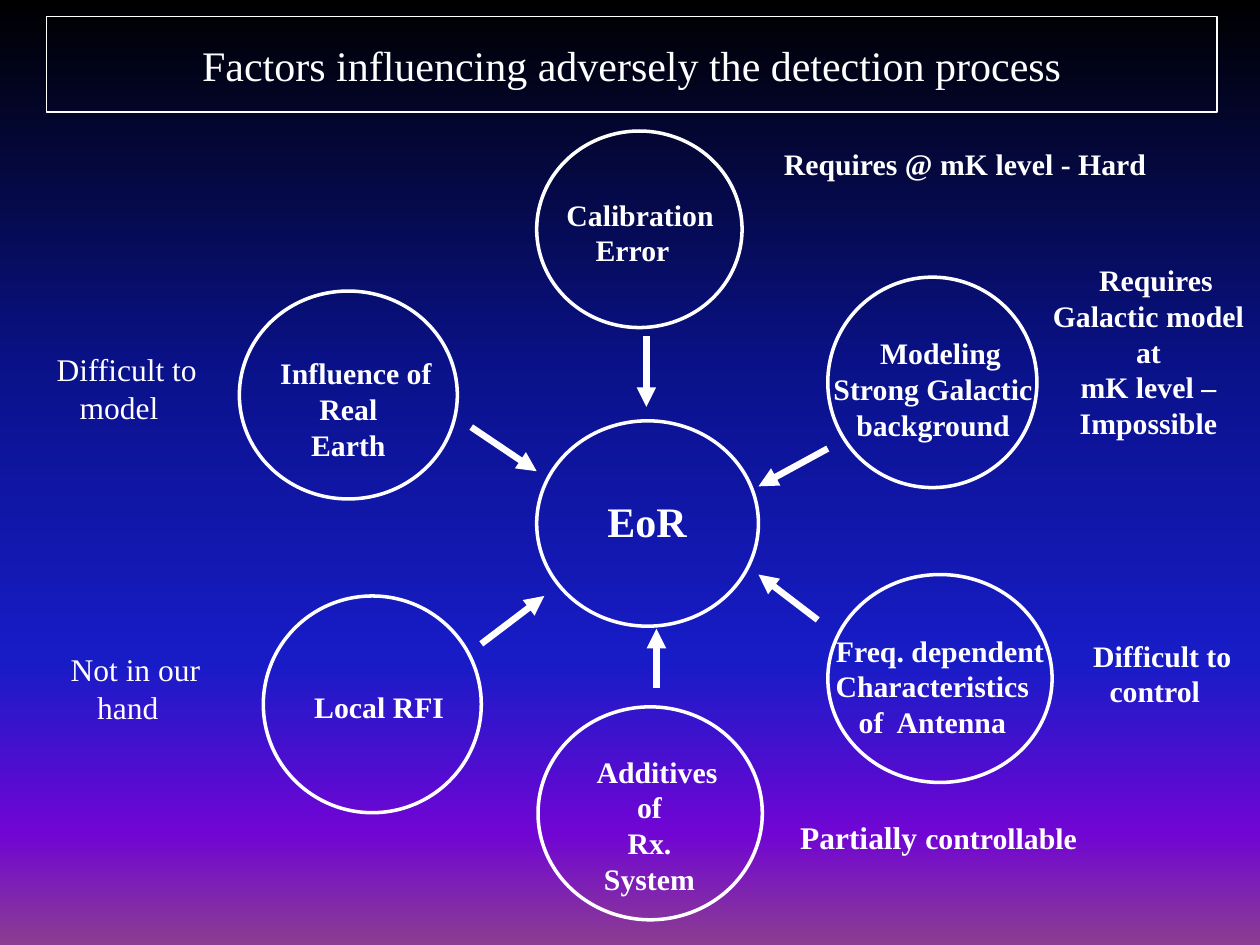
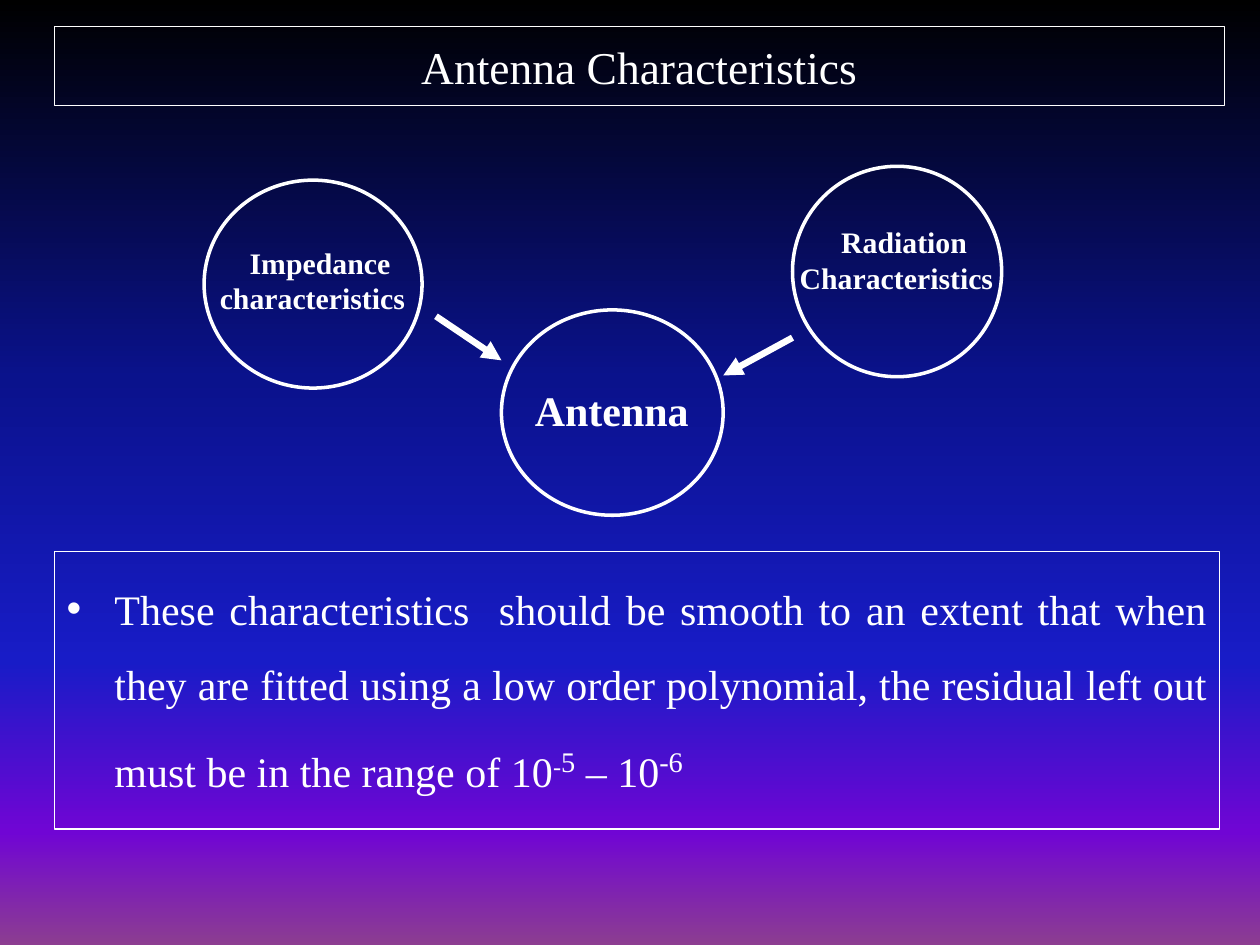
from lxml import etree
from pptx import Presentation
from pptx.dml.color import RGBColor
from pptx.enum.shapes import MSO_CONNECTOR, MSO_SHAPE
from pptx.enum.text import MSO_ANCHOR, MSO_AUTO_SIZE, PP_ALIGN
from pptx.oxml.ns import qn
from pptx.util import Inches, Pt

OVAL, RECT, STRAIGHT = MSO_SHAPE.OVAL, MSO_SHAPE.RECTANGLE, MSO_CONNECTOR.STRAIGHT
CENTER, JUSTIFY = PP_ALIGN.CENTER, PP_ALIGN.JUSTIFY
TOP, MIDDLE = MSO_ANCHOR.TOP, MSO_ANCHOR.MIDDLE
GROW = MSO_AUTO_SIZE.SHAPE_TO_FIT_TEXT

WHITE = RGBColor(0xFF, 0xFF, 0xFF)
FONT = "Times New Roman"
BACKGROUND = [(0, "000000"), (40, "0A128C"), (70, "181CC7"), (88, "7005D4"), (100, "8C3D91")]
FIRST_LINE_INDENT = 0.12
BULLET_INDENT = 0.38

# Circles and the arrows that lead from them to the hub
HUB = (4.26, 3.34, 1.76, 1.63)
SPOKES = {
    "calibration": ((4.26, 1.04, 1.63, 1.56), (5.13, 2.67, 5.13, 3.23)),
    "galaxy": ((6.57, 2.2, 1.66, 1.67), (6.57, 3.56, 6.02, 3.86)),
    "earth": ((1.9, 2.31, 1.73, 1.65), (3.74, 3.39, 4.26, 3.74)),
    "rfi": ((2.09, 4.73, 1.73, 1.72), (3.82, 5.11, 4.32, 4.73)),
    "receiver": ((4.27, 5.61, 1.78, 1.69), (5.21, 5.46, 5.21, 4.99)),
    "antenna": ((6.57, 4.56, 1.78, 1.65), (6.49, 4.92, 6.02, 4.56)),
}
UPPER_SPOKES = ["galaxy", "earth"]
ANTENNA_SHIFT = (-0.28, -0.88)

# Labels: box, lines, size, bold, wrap
FACTOR_LABELS = [
    ((4.6, 3.88, 0.95, 0.5), ["EoR"], 24, True, False),
    ((4.41, 5.93, 1.49, 0.96), ["Additives of", "Rx.", "System"], 17, True, False),
    ((6.41, 4.97, 1.98, 0.96), ["Freq. dependent", "Characteristics", "of  Antenna"], 17, True, False),
    ((6.45, 2.61, 1.91, 0.96), ["Modeling", "Strong Galactic", "background"], 17, True, False),
    ((2.27, 5.42, 1.36, 0.36), ["Local RFI"], 17, True, False),
    ((1.97, 2.77, 1.59, 0.96), ["Influence of", "Real", "Earth"], 17, True, False),
    ((4.27, 1.51, 1.5, 0.67), ["Calibration", "Error"], 17, True, False),
    ((5.99, 1.11, 3.22, 0.36), ["Requires @ mK level - Hard"], 17, True, False),
    ((8.23, 2.03, 1.77, 1.8), ["Requires Galactic model at", "mK level – Impossible"], 17, True, True),
    ((8.42, 5.01, 1.49, 0.67), ["Difficult to", "control"], 17, True, False),
    ((0.05, 5.11, 1.93, 0.71), ["Not in our", "hand"], 18, False, True),
    ((0.04, 2.73, 1.81, 0.71), ["Difficult to model"], 18, False, True),
]
RECEIVER_NOTE = ((5.76, 6.44, 3.26, 0.4), [("Partially ", 18), ("controllable", 17)])
ANTENNA_LABELS = [
    ((4.02, 3, 1.55, 0.5), ["Antenna"], 24, True, False),
    ((6.24, 1.73, 1.75, 0.67), ["Radiation", "Characteristics"], 17, True, False),
    ((1.64, 1.89, 1.68, 0.67), ["Impedance", "characteristics"], 17, True, False),
]
SMOOTHNESS = [  # text, size, superscript
    ("These characteristics  should be smooth to an extent that when they are fitted using "
     "a low order polynomial, the residual left out must be in the range of 10", 24, False),
    ("-", 24, True), ("5", 28, True), (" – 10", 24, False), ("-6", 28, True),
]


def inches(values):
    return [Inches(v) for v in values]


def moved(box, shift):
    return box[0] + shift[0], box[1] + shift[1], *box[2:]


def style_run(r, size, bold=False):
    r.font.name, r.font.size, r.font.bold = FONT, Pt(size), bold
    r.font.color.rgb = WHITE


def add_run(p, text, size, bold=False):
    r = p.add_run()
    r.text = text
    style_run(r, size, bold)
    return r


def outline(slide, kind, box, width):
    sp = slide.shapes.add_shape(kind, *inches(box))
    sp.shadow.inherit = False
    sp.fill.background()
    sp.line.color.rgb = WHITE
    sp.line.width = Pt(width)
    return sp


def arrow(slide, ends):
    line = slide.shapes.add_connector(STRAIGHT, *inches(ends))
    line.line.color.rgb = WHITE
    line.line.width = Pt(3.75)
    etree.SubElement(line.line._get_or_add_ln(), qn("a:tailEnd"), type="triangle")
    etree.SubElement(line._element.spPr, qn("a:effectLst"))


def text_box(slide, box, wrap):
    tf = slide.shapes.add_textbox(*inches(box)).text_frame
    tf.word_wrap = wrap
    tf.auto_size = GROW
    return tf


def center_indented(p):
    p.alignment = CENTER
    p._p.get_or_add_pPr().set("indent", str(Inches(FIRST_LINE_INDENT)))


def label(slide, box, lines, size, bold, wrap):
    tf = text_box(slide, box, wrap)
    tf.text = "\n".join(lines)
    for p in tf.paragraphs:
        p.alignment = CENTER
        style_run(p.runs[0], size, bold)
    center_indented(tf.paragraphs[0])


def title(slide, box, text, size):
    tf = outline(slide, RECT, box, 0.75).text_frame
    tf.vertical_anchor = MIDDLE
    p = tf.paragraphs[0]
    p.alignment = CENTER
    add_run(p, text, size)


def hub_and_spokes(slide, names, shift=(0, 0)):
    outline(slide, OVAL, moved(HUB, shift), 2)
    for name in names:
        circle, (x1, y1, x2, y2) = SPOKES[name]
        outline(slide, OVAL, moved(circle, shift), 2)
        arrow(slide, (*moved((x1, y1), shift), *moved((x2, y2), shift)))


def bulleted_box(slide, box, runs):
    tf = outline(slide, RECT, box, 0.75).text_frame
    tf.vertical_anchor = TOP
    p = tf.paragraphs[0]
    p.alignment = JUSTIFY
    p.line_spacing = 1.5
    p.space_before, p.space_after = Pt(4), Pt(12)
    pPr = p._p.get_or_add_pPr()
    pPr.set("marL", str(Inches(BULLET_INDENT)))
    pPr.set("indent", str(Inches(-BULLET_INDENT)))
    etree.SubElement(pPr, qn("a:buFont"), typeface="Arial")
    etree.SubElement(pPr, qn("a:buChar"), char="•")
    for text, size, raised in runs:
        r = add_run(p, text, size)
        if raised:
            r.font._element.set("baseline", "30000")


def paint_background(master):
    fill = master.background.fill
    fill.gradient()
    fill.gradient_angle = 270
    stops = next(master.element.iter(qn("a:gsLst")))
    for stop in list(stops):
        stops.remove(stop)
    for percent, color in BACKGROUND:
        stop = etree.SubElement(stops, qn("a:gs"), pos=str(percent * 1000))
        etree.SubElement(stop, qn("a:srgbClr"), val=color)


def factors_slide(slide):
    title(slide, (0.37, 0.13, 9.29, 0.76), "Factors influencing adversely the detection process", 24)
    hub_and_spokes(slide, SPOKES)
    for item in FACTOR_LABELS:
        label(slide, *item)
    box, runs = RECEIVER_NOTE
    p = text_box(slide, box, True).paragraphs[0]
    center_indented(p)
    for text, size in runs:
        add_run(p, text, size, True)


def antenna_slide(slide):
    title(slide, (0.43, 0.21, 9.29, 0.63), "Antenna Characteristics", 26)
    bulleted_box(slide, (0.43, 4.38, 9.25, 2.2), SMOOTHNESS)
    hub_and_spokes(slide, UPPER_SPOKES, ANTENNA_SHIFT)
    for item in ANTENNA_LABELS:
        label(slide, *item)


def main():
    prs = Presentation()
    prs.slide_width, prs.slide_height = Inches(10), Inches(7.5)
    paint_background(prs.slide_master)
    blank = prs.slide_layouts[6]
    for build in (factors_slide, antenna_slide):
        slide = prs.slides.add_slide(blank)
        for ph in list(slide.placeholders):
            ph._element.getparent().remove(ph._element)
        build(slide)
    prs.save("out.pptx")


if __name__ == "__main__":
    main()
